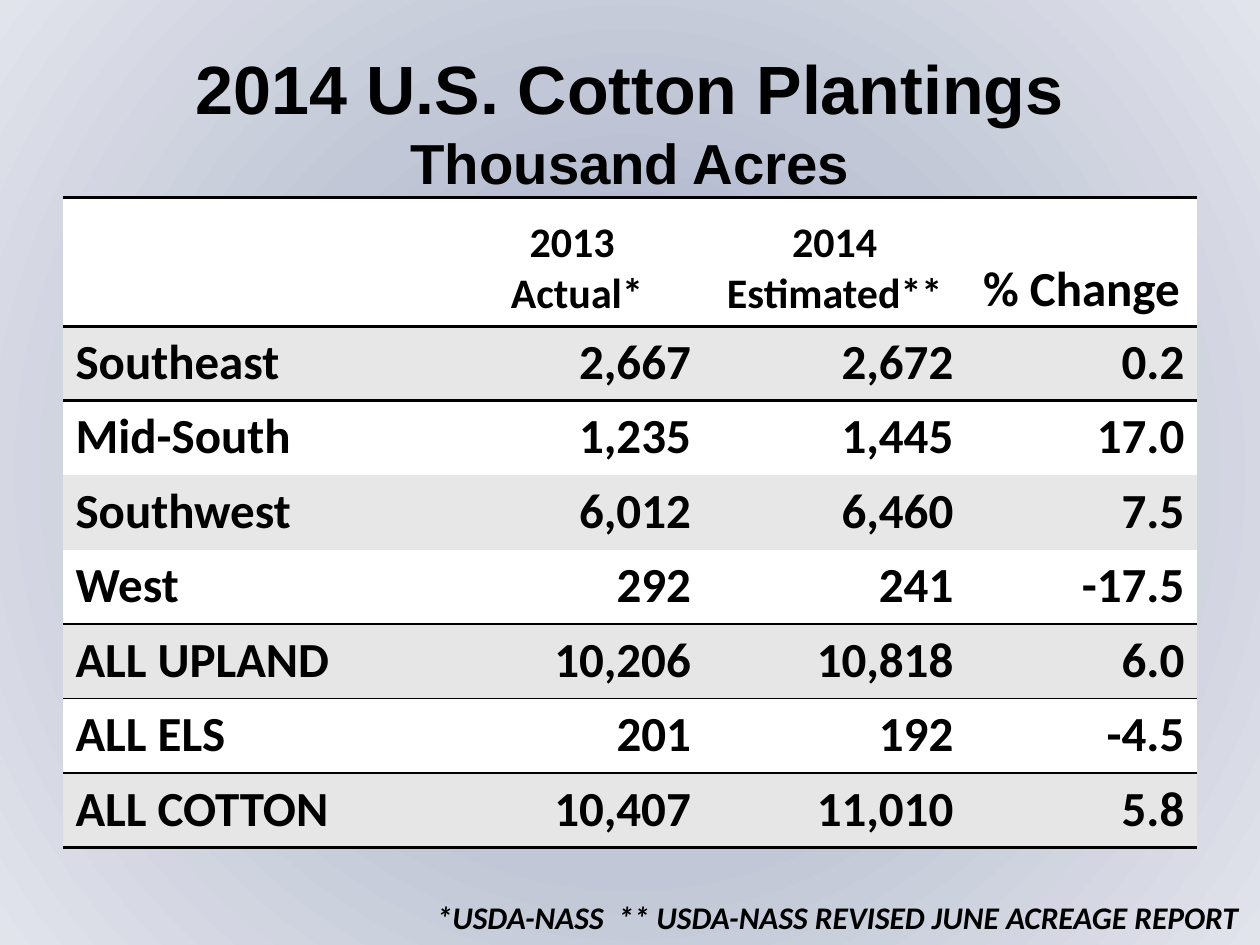
from dataclasses import dataclass

from lxml.etree import SubElement
from pptx import Presentation
from pptx.dml.color import RGBColor
from pptx.enum.text import MSO_ANCHOR as Anchor, MSO_AUTO_SIZE as AutoSize, PP_ALIGN as Align
from pptx.oxml import parse_xml
from pptx.oxml.ns import nsdecls, qn
from pptx.util import Pt

COLORS = {
    "ink": "000000", "plain": "FFFFFF", "region_band": "E7E7E7", "total_band": "E6E6E6",
    "glow_center": "98A3C1", "glow_middle": "C2C7D7", "glow_edge": "E1E4EB",
}
NO_STYLE = "{2D5ABB26-0587-4C30-8999-92F81FD0307C}"
COLUMN_WIDTHS = [216, 150, 150, 132]
HEADER_HEIGHT, ROW_HEIGHT = 73.4, 42.6
# Line weight above each row; the last key is the bottom edge of the table.
RULES = {0: 2, 1: 2, 5: 1, 7: 1, 8: 2}


@dataclass
class Planting:
    area: str
    actual: str
    estimated: str
    change: str
    band: str = "plain"


@dataclass
class Heading:
    lines: list[str]
    size: float


HEADINGS = [
    Heading([], 24),
    Heading(["2013", " Actual*"], 24),
    Heading(["2014 Estimated**"], 24),
    Heading(["% Change"], 28),
]
PLANTINGS = [
    Planting("Southeast", "2,667", "2,672", "0.2", "region_band"),
    Planting("Mid-South", "1,235", "1,445", "17.0"),
    Planting("Southwest", "6,012", "6,460", "7.5", "region_band"),
    Planting("West", "292", "241", "-17.5"),
    Planting("ALL UPLAND", "10,206", "10,818", "6.0", "total_band"),
    Planting("ALL ELS", "201", "192", "-4.5"),
    Planting("ALL COTTON", "10,407", "11,010", "5.8", "total_band"),
]


def write_lines(frame, lines: list[str], sizes: list[float], align,
                font_name: str = "Calibri", italic: bool = False) -> None:
    """Write one bold paragraph for each line."""
    for index, (line, size) in enumerate(zip(lines, sizes)):
        paragraph = frame.add_paragraph() if index else frame.paragraphs[0]
        paragraph.alignment = align
        run = paragraph.add_run()
        run.text = line
        font_format = {"name": font_name, "size": Pt(size), "bold": True, "italic": italic}
        for attribute, value in font_format.items():
            setattr(run.font, attribute, value)
        run.font.color.rgb = RGBColor.from_string(COLORS["ink"])


def format_frame(frame, settings: dict) -> None:
    for attribute, value in settings.items():
        setattr(frame, attribute, value)


def place(shape, left: float, top: float, width: float, height: float) -> None:
    shape.left, shape.top, shape.width, shape.height = map(Pt, (left, top, width, height))


def paint_background(slide) -> None:
    """Fill the background with a glow that spreads from the centre."""
    glow = ["glow_center", "glow_middle", "glow_edge"]
    stops = "".join(
        f'<a:gs pos="{index * 50000}"><a:srgbClr val="{COLORS[name]}"/></a:gs>'
        for index, name in enumerate(glow))
    slide.background.fill.solid()
    solid = slide.element.find(".//" + qn("p:bgPr")).find(qn("a:solidFill"))
    solid.getparent().replace(solid, parse_xml(
        f'<a:gradFill {nsdecls("a")} rotWithShape="1"><a:gsLst>{stops}</a:gsLst>'
        '<a:path path="circle"><a:fillToRect l="50000" t="50000" r="50000" b="50000"/>'
        '</a:path></a:gradFill>'))


def format_cell(cell, row: int, band: str) -> None:
    """Set the fill and the rules above and below a cell."""
    properties = cell._tc.get_or_add_tcPr()
    for side, weight in (("a:lnT", RULES.get(row)), ("a:lnB", RULES.get(row + 1))):
        if weight:
            line = SubElement(properties, qn(side), w=str(Pt(weight)))
            SubElement(SubElement(line, qn("a:solidFill")), qn("a:srgbClr"), val=COLORS["ink"])
    cell.fill.solid()
    cell.fill.fore_color.rgb = RGBColor.from_string(COLORS[band])


def add_plantings_table(slide) -> None:
    frame = slide.shapes.add_table(
        len(PLANTINGS) + 1, len(HEADINGS), Pt(36), Pt(113), Pt(sum(COLUMN_WIDTHS)),
        Pt(HEADER_HEIGHT + ROW_HEIGHT * len(PLANTINGS)))
    table = frame.table
    table._tbl.tblPr.find(qn("a:tableStyleId")).text = NO_STYLE
    for column, width in zip(table.columns, COLUMN_WIDTHS):
        column.width = Pt(width)
    for index, table_row in enumerate(table.rows):
        table_row.height = Pt(ROW_HEIGHT if index else HEADER_HEIGHT)

    for column, heading in enumerate(HEADINGS):
        cell = table.cell(0, column)
        format_cell(cell, 0, "plain")
        cell.vertical_anchor = Anchor.BOTTOM
        write_lines(cell.text_frame, heading.lines, [heading.size] * len(heading.lines),
                    Align.CENTER)
    for row, planting in enumerate(PLANTINGS, start=1):
        values = [planting.area, planting.actual, planting.estimated, planting.change]
        for column, value in enumerate(values):
            cell = table.cell(row, column)
            format_cell(cell, row, planting.band)
            write_lines(cell.text_frame, [value], [28], Align.RIGHT if column else Align.LEFT)


def add_title(slide) -> None:
    title = slide.shapes.title
    place(title, 36, 21.6, 648, 90)
    format_frame(title.text_frame, {
        "auto_size": AutoSize.NONE, "word_wrap": True,
        "vertical_anchor": Anchor.MIDDLE, "margin_top": Pt(9)})
    write_lines(title.text_frame, ["2014 U.S. Cotton Plantings", "Thousand Acres"],
                [39, 32.2], Align.CENTER, "Arial")


def add_source_note(slide) -> None:
    note = slide.shapes.add_textbox(Pt(222), Pt(509.8), Pt(498), Pt(29))
    format_frame(note.text_frame, {
        "word_wrap": True, "auto_size": AutoSize.SHAPE_TO_FIT_TEXT, "margin_left": Pt(27.5)})
    write_lines(note.text_frame, ["*USDA-NASS  ** USDA-NASS REVISED JUNE ACREAGE REPORT"],
                [18], Align.LEFT, italic=True)


def main() -> None:
    deck = Presentation()
    deck.slide_width, deck.slide_height = Pt(720), Pt(540)
    slide = deck.slides.add_slide(deck.slide_layouts.get_by_name("Title Only"))
    paint_background(slide)
    add_title(slide)
    add_plantings_table(slide)
    add_source_note(slide)
    deck.save("out.pptx")


if __name__ == "__main__":
    main()
